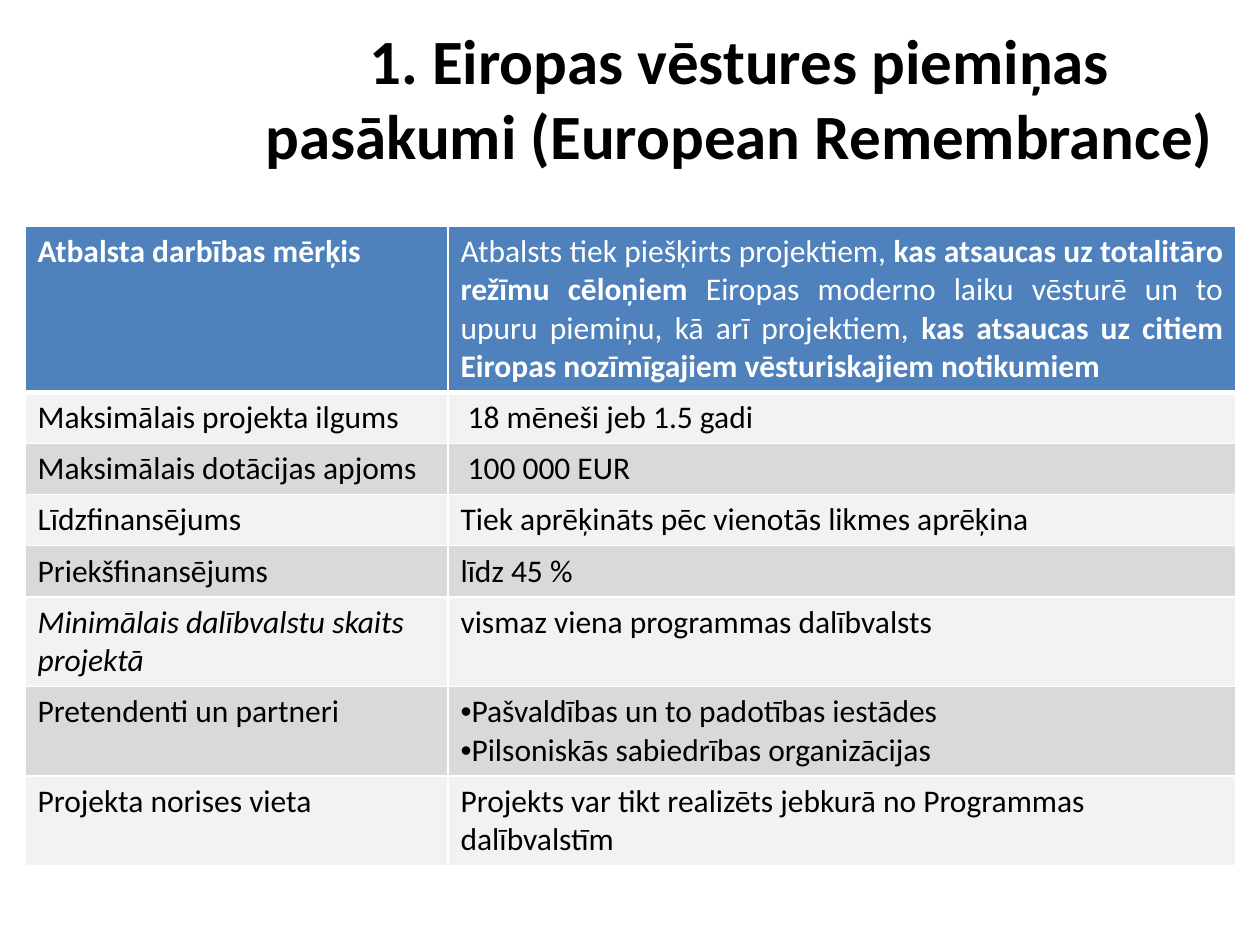
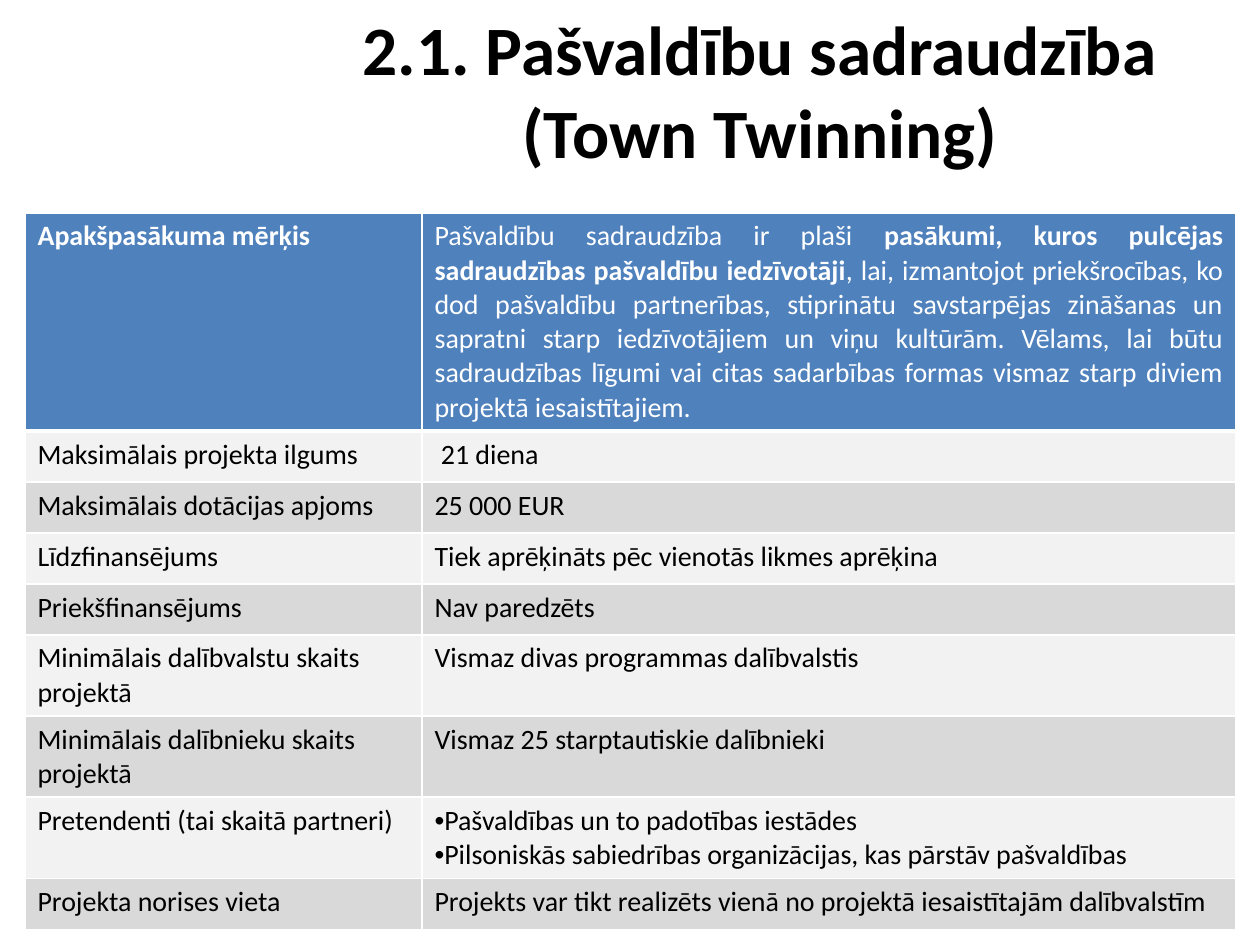
import pptx
import pptx.dml.color
import pptx.enum.text
import pptx.oxml
import pptx.oxml.ns
import pptx.util

# Within a cell, ** switches bold on and off, and each list item becomes a bullet.
PAGES = [
    {
        "title": "1. Eiropas vēstures piemiņas pasākumi (European Remembrance)",
        "title_box": (244, 15, 991, 190), "title_size": 36,
        "table_top": 226, "table_height": 632, "columns": (423, 788), "text_size": 18,
        "italic": "Minimālais dalībvalstu skaits projektā",
        "rows": [
            ("**Atbalsta darbības mērķis**",
             "Atbalsts tiek piešķirts projektiem, **kas atsaucas uz totalitāro režīmu cēloņiem** "
             "Eiropas moderno laiku vēsturē un to upuru piemiņu, kā arī projektiem, "
             "**kas atsaucas uz citiem Eiropas nozīmīgajiem vēsturiskajiem notikumiem**"),
            ("Maksimālais projekta ilgums", " 18 mēneši jeb 1.5 gadi"),
            ("Maksimālais dotācijas apjoms", " 100 000 EUR"),
            ("Līdzfinansējums", "Tiek aprēķināts pēc vienotās likmes aprēķina"),
            ("Priekšfinansējums", "līdz 45 %"),
            ("Minimālais dalībvalstu skaits projektā", "vismaz viena programmas dalībvalsts"),
            ("Pretendenti un partneri",
             ["Pašvaldības un to padotības iestādes", "Pilsoniskās sabiedrības organizācijas"]),
            ("Projekta norises vieta",
             "Projekts var tikt realizēts jebkurā no Programmas dalībvalstīm"),
        ],
    },
    {
        "title": "2.1. Pašvaldību sadraudzība (Town Twinning)",
        "title_box": (260, 0, 1000, 142), "title_size": 39.6,
        "table_top": 213, "table_height": 709, "columns": (397, 814), "text_size": 16,
        "italic": None,
        "rows": [
            ("**Apakšpasākuma mērķis**",
             "Pašvaldību sadraudzība ir plaši **pasākumi, kuros pulcējas sadraudzības pašvaldību "
             "iedzīvotāji**, lai, izmantojot priekšrocības, ko dod pašvaldību partnerības, "
             "stiprinātu savstarpējas zināšanas un sapratni starp iedzīvotājiem un viņu kultūrām. "
             "Vēlams, lai būtu sadraudzības līgumi vai citas sadarbības formas vismaz starp diviem "
             "projektā iesaistītajiem."),
            ("Maksimālais projekta ilgums", " 21 diena"),
            ("Maksimālais dotācijas apjoms", "25 000 EUR"),
            ("Līdzfinansējums", "Tiek aprēķināts pēc vienotās likmes aprēķina"),
            ("Priekšfinansējums", "Nav paredzēts"),
            ("Minimālais dalībvalstu skaits projektā", "Vismaz divas programmas dalībvalstis"),
            ("Minimālais dalībnieku skaits projektā", "Vismaz 25 starptautiskie dalībnieki"),
            ("Pretendenti (tai skaitā partneri)",
             ["Pašvaldības un to padotības iestādes",
              "Pilsoniskās sabiedrības organizācijas, kas pārstāv pašvaldības"]),
            ("Projekta norises vieta",
             "Projekts var tikt realizēts vienā no projektā iesaistītajām dalībvalstīm"),
        ],
    },
]

FONT = "Calibri"
BLACK = pptx.dml.color.RGBColor(0x00, 0x00, 0x00)
WHITE = pptx.dml.color.RGBColor(0xFF, 0xFF, 0xFF)
HEADER_BLUE = pptx.dml.color.RGBColor(0x4F, 0x81, 0xBD)
BANDS = (pptx.dml.color.RGBColor(0xD9, 0xD9, 0xD9), pptx.dml.color.RGBColor(0xF2, 0xF2, 0xF2))
ALIGN = pptx.enum.text.PP_ALIGN

PIXEL = pptx.util.Inches(1) / 126
PAGE_SIZE = (1260, 945)
TABLE_LEFT = 25
ROW_HEIGHT = 51


def px(length):
    return pptx.util.Emu(round(length * PIXEL))


def style_font(font, size, color, **extra):
    formats = {"name": FONT, "size": pptx.util.Pt(size), **extra}
    for name, value in formats.items():
        setattr(font, name, value)
    font.color.rgb = color


def add_title(page, content):
    title = page.shapes.title
    for name, length in zip(("left", "top", "width", "height"), content["title_box"]):
        setattr(title, name, px(length))
    title.text = content["title"]
    frame = title.text_frame
    formats = {"word_wrap": True, "auto_size": pptx.enum.text.MSO_AUTO_SIZE.NONE,
               "vertical_anchor": pptx.enum.text.MSO_ANCHOR.TOP}
    for name, value in formats.items():
        setattr(frame, name, value)
    para = frame.paragraphs[0]
    para.alignment = ALIGN.CENTER
    style_font(para.runs[0].font, content["title_size"], BLACK, bold=True)


def set_borders(cell, row):
    """White cell lines, with a thick one below the header row."""
    widths = {"L": 1, "R": 1, "T": 3 if row == 1 else 1, "B": 3 if row == 0 else 1}
    for side, width in widths.items():
        cell._tc.get_or_add_tcPr().append(pptx.oxml.parse_xml(
            f'<a:ln{side} {pptx.oxml.ns.nsdecls("a")} w="{pptx.util.Pt(width)}">'
            f'<a:solidFill><a:srgbClr val="{WHITE}"/></a:solidFill></a:ln{side}>'))


def add_bullet(para):
    properties = para._p.get_or_add_pPr()
    properties.set("marL", "0")
    properties.set("indent", "0")
    for tag in ('buFont typeface="Arial"', 'buChar char="•"'):
        properties.append(pptx.oxml.parse_xml(f'<a:{tag} {pptx.oxml.ns.nsdecls("a")}/>'))


def fill_cell(cell, row, value, size, italic):
    set_borders(cell, row)
    cell.fill.solid()
    cell.fill.fore_color.rgb = BANDS[row % 2] if row else HEADER_BLUE
    bulleted = isinstance(value, list)
    for index, line in enumerate(value if bulleted else [value]):
        frame = cell.text_frame
        para = frame.add_paragraph() if index else frame.paragraphs[0]
        if bulleted:
            add_bullet(para)
        for part, words in enumerate(line.split("**")):
            if words:
                span = para.add_run()
                span.text = words
                style_font(span.font, size, BLACK if row else WHITE,
                           bold=part % 2 == 1, italic=italic)


def add_conditions_table(page, content):
    rows, columns = content["rows"], content["columns"]
    holder = page.shapes.add_table(
        len(rows), len(columns), px(TABLE_LEFT), px(content["table_top"]),
        px(sum(columns)), px(ROW_HEIGHT * len(rows)))
    table = holder.table
    for column, width in zip(table.columns, columns):
        column.width = px(width)
    for row, values in enumerate(rows):
        for column, value in enumerate(values):
            fill_cell(table.cell(row, column), row, value, content["text_size"],
                      value == content["italic"])
    table.cell(0, 1).text_frame.paragraphs[0].alignment = ALIGN.JUSTIFY
    holder.height = px(content["table_height"])


def main():
    deck = pptx.Presentation()
    deck.slide_width, deck.slide_height = map(px, PAGE_SIZE)
    title_only = deck.slide_layouts.get_by_name("Title Only")
    for content in PAGES:
        page = deck.slides.add_slide(title_only)
        add_title(page, content)
        add_conditions_table(page, content)
    deck.save("out.pptx")


if __name__ == "__main__":
    main()
